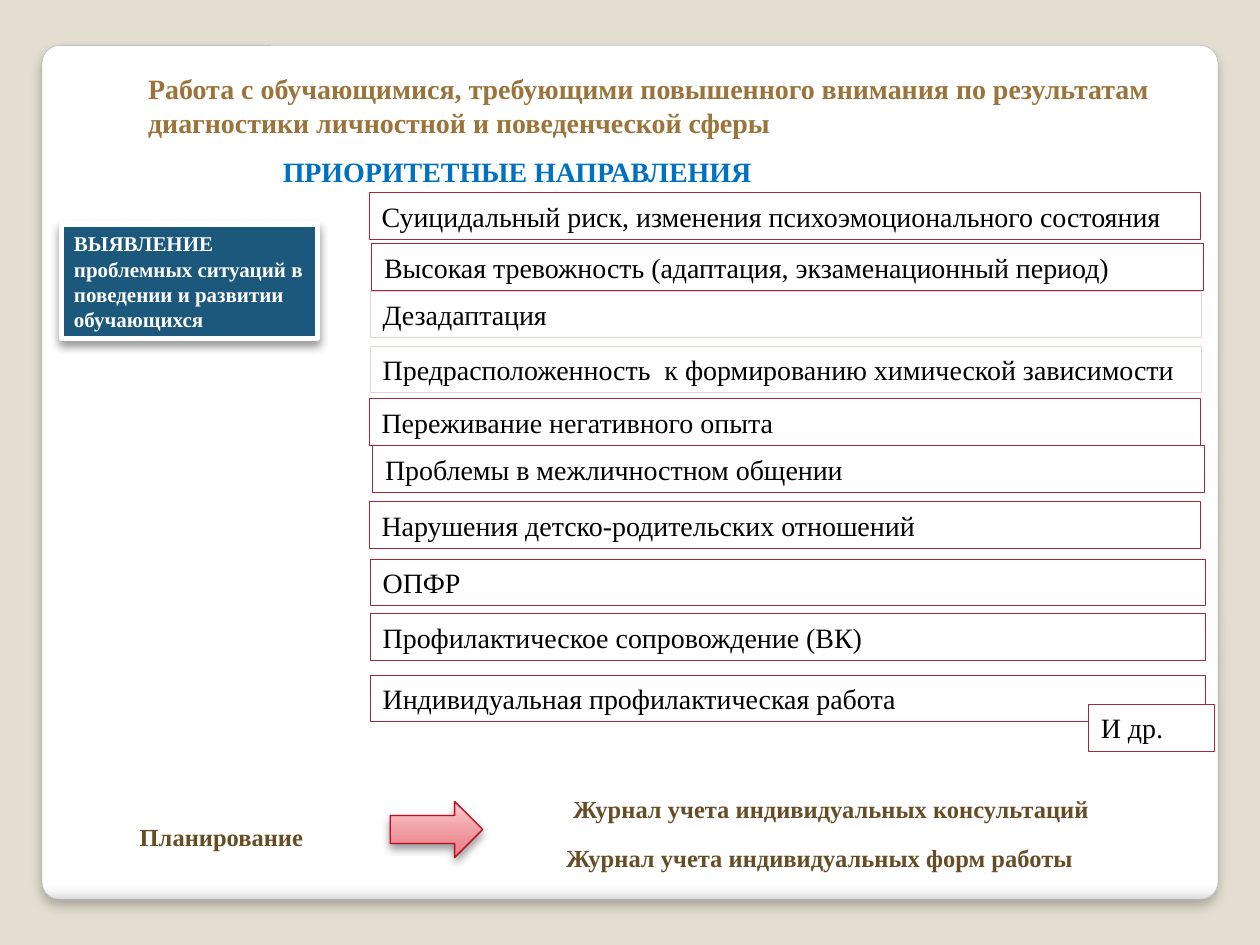
from lxml import etree
from pptx import Presentation
from pptx.dml.color import RGBColor
from pptx.enum.shapes import MSO_SHAPE
from pptx.enum.text import MSO_ANCHOR, MSO_AUTO_SIZE, PP_ALIGN
from pptx.oxml import parse_xml
from pptx.oxml.ns import nsdecls, qn
from pptx.util import Pt

RECTANGLE = MSO_SHAPE.RECTANGLE
ROUNDED = MSO_SHAPE.ROUNDED_RECTANGLE
ARROW = MSO_SHAPE.RIGHT_ARROW
LEFT, CENTER = PP_ALIGN.LEFT, PP_ALIGN.CENTER
TOP, MIDDLE = MSO_ANCHOR.TOP, MSO_ANCHOR.MIDDLE
NO_FIT = MSO_AUTO_SIZE.NONE
FONT = "Times New Roman"
ROW_HEIGHT = 26.6
COLORS = {
    "background": "E3DED1", "white": "FFFFFF", "black": "000000",
    "panel_line": "A4A4A4", "title": "9A743A", "heading": "0070C0",
    "plan": "674D26", "row_line": "9F2936", "pale_line": "F2CED2",
    "detection": "1B587C", "arrow_line": "BC0B1F",
}
PANEL_STOPS = [(0, "FFFFFF"), (98, "FFFFFF"), (99, "F7F7F7"), (100, "DADADA")]
ARROW_STOPS = [(0, "E68589"), (25, "EC8D92"), (100, "FBCACC")]
DIRECTIONS = [
    ("Суицидальный риск, изменения психоэмоционального состояния", 211, 110.2, 475.2, "row_line", 0.5),
    ("Высокая тревожность (адаптация, экзаменационный период)", 212.4, 139.4, 475.2, "row_line", 0.5),
    ("Дезадаптация", 211.6, 166.5, 475.2, "pale_line", 0.75),
    ("Предрасположенность  к формированию химической зависимости", 211.6, 198, 475.2, "pale_line", 0.5),
    ("Переживание негативного опыта", 211, 228, 475.2, "row_line", 0.5),
    ("Проблемы в межличностном общении", 213, 254.8, 475.2, "row_line", 0.5),
    ("Нарушения детско-родительских отношений", 211, 286.8, 475.2, "row_line", 0.5),
    ("ОПФР", 211.6, 319.6, 477, "row_line", 0.5),
    ("Профилактическое сопровождение (ВК)", 211.6, 350.8, 477, "row_line", 0.5),
    ("Индивидуальная профилактическая работа", 211.6, 385.8, 477, "row_line", 0.5),
    ("И др.", 622, 402.6, 72, "row_line", 0.5),
]
LABELS = [
    ("ПРИОРИТЕТНЫЕ НАПРАВЛЕНИЯ", (140.4, 85, 310.3, 26.6), 16, "heading", CENTER),
    ("Планирование", (72.7, 466, 154.8, 24.5), 14, "plan", LEFT),
    ("Журнал учета индивидуальных консультаций", (320.4, 450, 341.3, 24.5), 14, "plan", LEFT),
    ("Журнал учета индивидуальных форм работы", (316.4, 478, 305.3, 24.5), 14, "plan", LEFT),
]


def color(name):
    """Return the named colour."""
    return RGBColor.from_string(COLORS[name])


def write(shape, text, size, ink, bold=False, align=LEFT, anchor=TOP):
    """Put one formatted paragraph into a shape."""
    frame = shape.text_frame
    frame.text = text
    frame.word_wrap = True
    frame.auto_size = NO_FIT
    frame.vertical_anchor = anchor
    paragraph = frame.paragraphs[0]
    paragraph.alignment = align
    font = paragraph.runs[0].font
    font.name, font.size, font.bold = FONT, Pt(size), bold
    font.color.rgb = color(ink)


def add_block(page, kind, bounds, fill, line, width):
    """Add a filled and outlined preset shape without a shadow."""
    block = page.shapes.add_shape(kind, *map(Pt, bounds))
    block.shadow.inherit = False
    block.fill.solid()
    block.fill.fore_color.rgb = color(fill)
    block.line.color.rgb = color(line)
    block.line.width = Pt(width)
    return block


def set_gradient(shape, stops, angle):
    """Replace the solid fill with a linear gradient."""
    properties = shape._element.spPr
    marks = "".join(
        f'<a:gs pos="{place * 1000}"><a:srgbClr val="{value}"/></a:gs>' for place, value in stops)
    gradient = parse_xml(
        f'<a:gradFill {nsdecls("a")} rotWithShape="1"><a:gsLst>{marks}</a:gsLst>'
        f'<a:lin ang="{angle * 60000}" scaled="0"/></a:gradFill>')
    properties.replace(properties.find(qn("a:solidFill")), gradient)


def add_shadow(shape, alpha, blur, distance):
    """Give a shape a soft black shadow falling straight down."""
    effects = shape._element.spPr.find(qn("a:effectLst"))
    shadow = etree.SubElement(
        effects, qn("a:outerShdw"), blurRad=str(Pt(blur)), dist=str(Pt(distance)),
        dir="5400000", algn="ctr", rotWithShape="0")
    tint = etree.SubElement(shadow, qn("a:srgbClr"), val=COLORS["black"])
    etree.SubElement(tint, qn("a:alpha"), val=str(alpha * 1000))


def add_panel(page):
    """Add the rounded panel behind everything else."""
    panel = add_block(page, ROUNDED, (24, 26, 672, 488), "white", "panel_line", 0.16)
    panel.adjustments[0] = 0.021
    set_gradient(panel, PANEL_STOPS, 90)
    add_shadow(panel, 25, 6, 4)
    page.shapes._spTree.insert(2, panel._element)


def add_title(page, text):
    """Place and format the title placeholder."""
    title = page.shapes.title
    title.left, title.top, title.width, title.height = map(Pt, (77.4, 37.4, 609, 46))
    write(title, text, 16, "title", bold=True)


def add_label(page, text, bounds, size, ink, align):
    """Add a bold text label."""
    box = page.shapes.add_textbox(*map(Pt, bounds))
    write(box, text, size, ink, bold=True, align=align)


def add_direction(page, text, left, top, width, line, weight):
    """Add one outlined row of the list of directions."""
    row = add_block(page, RECTANGLE, (left, top, width, ROW_HEIGHT), "white", line, weight)
    write(row, text, 16, "black", anchor=MIDDLE)


def add_detection(page, text):
    """Add the dark box that names the detection step."""
    box = add_block(page, RECTANGLE, (35.2, 128, 146.2, 65.4), "detection", "white", 3)
    add_shadow(box, 40, 5.2, 3)
    write(box, text, 12, "white", bold=True, anchor=MIDDLE)


def add_arrow(page):
    """Add the arrow from planning to the journals."""
    arrow = add_block(page, ARROW, (223, 458, 52.8, 32), "white", "arrow_line", 0.75)
    set_gradient(arrow, ARROW_STOPS, 270)
    add_shadow(arrow, 40, 5.2, 3)


def main():
    """Build and save the slide."""
    deck = Presentation()
    deck.slide_width, deck.slide_height = Pt(720), Pt(540)
    page = deck.slides.add_slide(deck.slide_layouts[5])
    page.background.fill.solid()
    page.background.fill.fore_color.rgb = color("background")
    add_panel(page)
    add_title(page, "Работа с обучающимися, требующими повышенного внимания "
                    "по результатам диагностики личностной и поведенческой сферы")
    for direction in DIRECTIONS:
        add_direction(page, *direction)
    for label in LABELS:
        add_label(page, *label)
    add_arrow(page)
    add_detection(page, "ВЫЯВЛЕНИЕ проблемных ситуаций в поведении и развитии обучающихся")
    deck.save("out.pptx")


if __name__ == "__main__":
    main()
